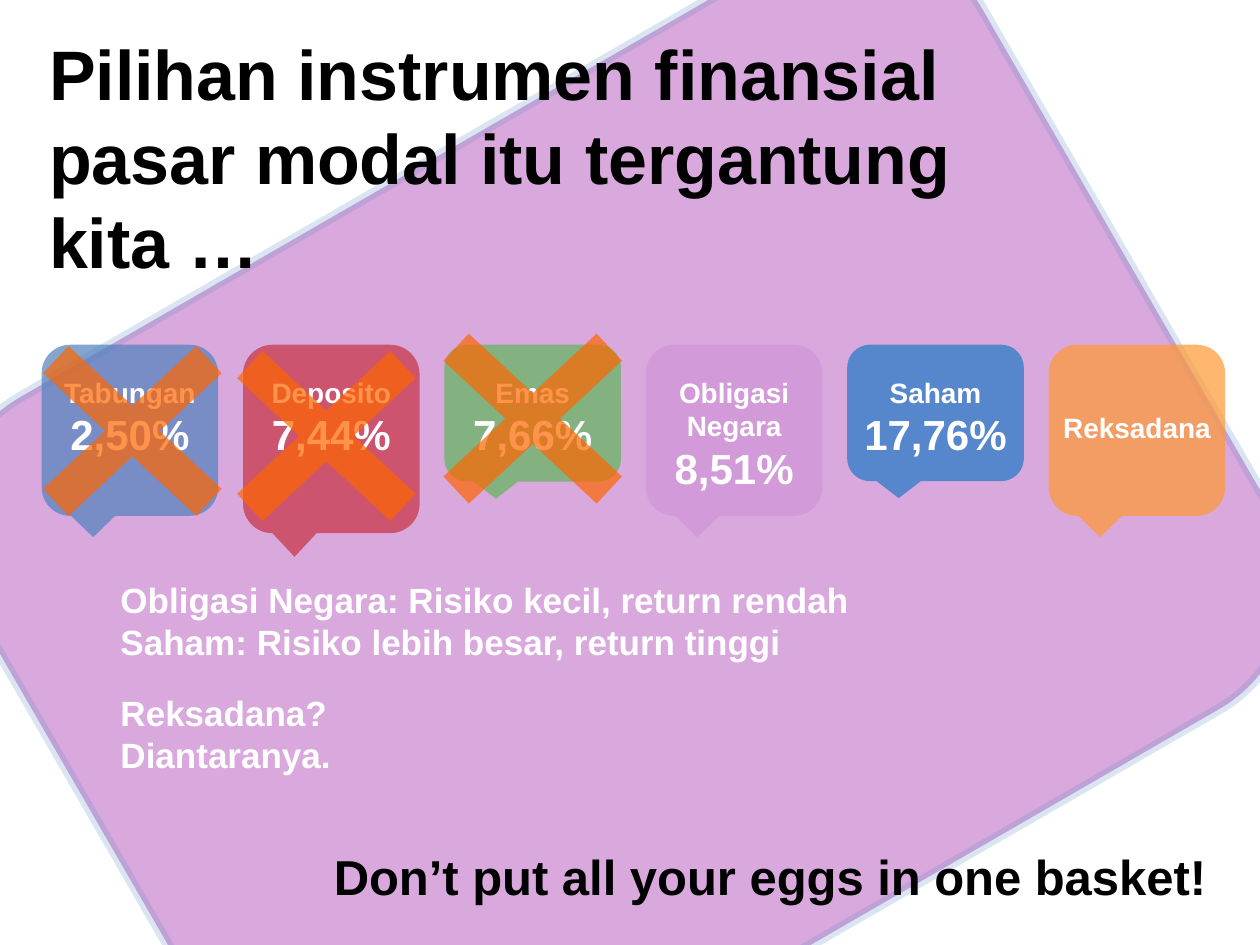
"""Builds the slide on choosing capital market instruments."""
import pptx
import pptx.util
import pptx.dml.color
import pptx.enum.shapes
import pptx.enum.text
import pptx.oxml
import pptx.oxml.ns

Cm = pptx.util.Cm
MSO = pptx.enum.shapes.MSO_SHAPE
ANCHOR = pptx.enum.text.MSO_ANCHOR
ALIGN = pptx.enum.text.PP_ALIGN

COLORS = {
    "black": "000000", "white": "FFFFFF", "line": "4F81BD", "lilac": "D094D6",
    "red": "C00000", "green": "5FB557", "blue": "0070C0", "orange": "FF9933",
    "cross": "FF6600",
}

prs = pptx.Presentation()
prs.slide_width, prs.slide_height = Cm(25.4), Cm(19.05)
s = prs.slides.add_slide(prs.slide_layouts[6])


def paint(fill, color, opacity):
    fill.solid()
    fill.fore_color.rgb = pptx.dml.color.RGBColor.from_string(COLORS[color])
    clr = fill._xPr.find(".//" + pptx.oxml.ns.qn("a:srgbClr"))
    clr.append(pptx.oxml.parse_xml(
        f'<a:alpha {pptx.oxml.ns.nsdecls("a")} val="{opacity * 1000}"/>'))


def add_text(box, lines, color, align=ALIGN.LEFT, anchor=ANCHOR.TOP):
    tf = s.shapes.add_textbox(*(Cm(v) for v in box)).text_frame
    tf.word_wrap = True
    tf.vertical_anchor = anchor
    for i, (text, size) in enumerate(lines):
        p = tf.paragraphs[0] if i == 0 else tf.add_paragraph()
        p.alignment = align
        r = p.add_run()
        r.text = text
        r.font.name, r.font.size, r.font.bold = "Arial", pptx.util.Pt(size), True
        r.font.color.rgb = pptx.dml.color.RGBColor.from_string(COLORS[color])


sp = s.shapes.add_shape(MSO.FLOWCHART_ALTERNATE_PROCESS,
                        Cm(0.66), Cm(2.39), Cm(23.65), Cm(17.53))
sp.rotation = 330
sp.shadow.inherit = False
paint(sp.fill, "lilac", 80)
sp.line.width = pptx.util.Pt(6)
paint(sp.line.fill, "line", 20)

add_text((0.74, 1.88, 18.82, 2.54),
         [("Pilihan instrumen finansial pasar modal itu tergantung kita …", 40)],
         "black", anchor=ANCHOR.MIDDLE)

cards = [
    ("Tabungan", "2,50%", "line", 70, 3.45),
    ("Deposito", "7,44%", "red", 50, 3.8),
    ("Emas", "7,66%", "green", 70, 2.76),
    ("Obligasi Negara", "8,51%", "lilac", 70, 3.45),
    ("Saham", "17,76%", "blue", 60, 2.75),
    ("Reksadana", None, "orange", 70, 3.45),
]
for i, (name, rate, color, opacity, height) in enumerate(cards):
    left = 0.84 + 4.06 * i
    sp = s.shapes.add_shape(MSO.ROUNDED_RECTANGULAR_CALLOUT,
                            Cm(left), Cm(6.95), Cm(3.56), Cm(height))
    sp.shadow.inherit = False
    sp.line.fill.background()
    paint(sp.fill, color, opacity)
    lines = [(name, 16)] + ([(rate, 24)] if rate else [])
    add_text((left, 7.44 if rate else 8.15, 3.56, 1.96 if rate else 0.94),
             lines, "white", ALIGN.CENTER)

for left, top in [(-0.3, 5.92), (3.61, 6.02), (7.77, 5.67)]:
    sp = s.shapes.add_shape(MSO.MATH_MULTIPLY, Cm(left), Cm(top), Cm(5.94), Cm(5.54))
    sp.adjustments[0] = 0.135
    sp.shadow.inherit = False
    sp.line.fill.background()
    paint(sp.fill, "cross", 70)

notes = [
    (11.53, ["Obligasi Negara: Risiko kecil, return rendah",
             "Saham: Risiko lebih besar, return tinggi"]),
    (13.82, ["Reksadana?", "Diantaranya."]),
]
for top, lines in notes:
    add_text((2.18, top, 20.04, 1.96), [(text, 20) for text in lines], "white")

add_text((6.48, 16.38, 18.82, 2.54), [("Don’t put all your eggs in one basket!", 28)],
         "black", anchor=ANCHOR.MIDDLE)

prs.save("out.pptx")
